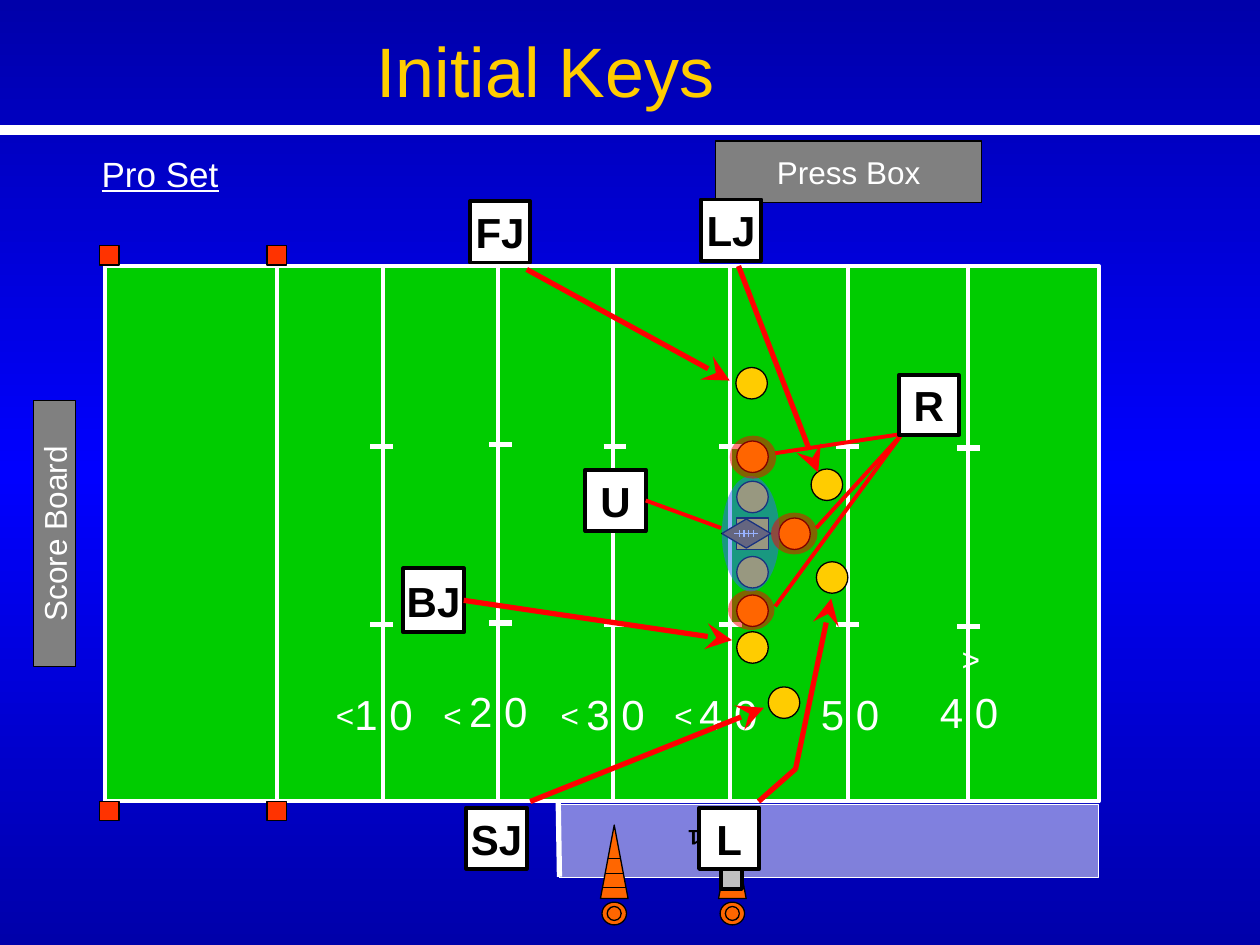
from copy import deepcopy

from lxml import etree
from pptx import Presentation
from pptx.dml.color import RGBColor
from pptx.enum.dml import MSO_LINE
from pptx.enum.shapes import MSO_CONNECTOR, MSO_SHAPE
from pptx.enum.text import MSO_ANCHOR, MSO_AUTO_SIZE, PP_ALIGN
from pptx.oxml.ns import qn
from pptx.util import Pt

RECT, OVAL = MSO_SHAPE.RECTANGLE, MSO_SHAPE.OVAL
TRIANGLE, DIAMOND = MSO_SHAPE.ISOSCELES_TRIANGLE, MSO_SHAPE.FLOWCHART_DECISION
STRAIGHT = MSO_CONNECTOR.STRAIGHT
DOTTED = MSO_LINE.ROUND_DOT
LEFT, CENTER, RIGHT = PP_ALIGN.LEFT, PP_ALIGN.CENTER, PP_ALIGN.RIGHT
MIDDLE = MSO_ANCHOR.MIDDLE
GROW = MSO_AUTO_SIZE.SHAPE_TO_FIT_TEXT
RIGHT_SIDE = 3

WHITE, BLACK, GRAY, SILVER = "FFFFFF", "000000", "808080", "C0C0C0"
GREEN, YELLOW, ORANGE, RED = "00CC00", "FFCC00", "FF6600", "FF0000"
PYLON_RED, BROWN, BLUE = "FF3300", "996600", "3366FF"

FIELD_LEFT, FIELD_TOP, FIELD_WIDTH, FIELD_HEIGHT = 60, 152, 568, 306
FIELD_BOTTOM = FIELD_TOP + FIELD_HEIGHT


def color(hex_text):
    return RGBColor.from_string(hex_text)


class Diagram:
    font = "Arial"

    def __init__(self, page):
        self.page = page
        self.shapes = page.shapes

    def background(self, *stops):
        """Fill the page with an evenly spaced vertical gradient."""
        fill = self.page.background.fill
        fill.gradient()
        fill.gradient_angle = 90
        stop_list = self.page.element.find(".//" + qn("a:gsLst"))
        while len(stop_list) < len(stops):
            stop_list.append(deepcopy(stop_list[-1]))
        for index, (stop, hex_text) in enumerate(zip(fill.gradient_stops, stops)):
            stop.color.rgb = color(hex_text)
            stop.position = index / (len(stops) - 1)

    def shape(self, kind, left, top, width, height, fill=None, line=BLACK,
              weight=0.75, opacity=100):
        shape = self.shapes.add_shape(kind, Pt(left), Pt(top), Pt(width), Pt(height))
        shape.shadow.inherit = False
        if fill:
            shape.fill.solid()
            shape.fill.fore_color.rgb = color(fill)
        else:
            shape.fill.background()
        if opacity < 100:
            tint = shape._element.spPr.find(".//" + qn("a:srgbClr"))
            etree.SubElement(tint, qn("a:alpha"), val=str(opacity * 1000))
        if line:
            shape.line.color.rgb = color(line)
            shape.line.width = Pt(weight)
        else:
            shape.line.fill.background()
        return shape

    def line(self, x1, y1, x2, y2, stroke=WHITE, weight=2.25, arrow=False, start=None):
        """Draw a line; start is a box whose right side it leaves from."""
        line = self.shapes.add_connector(STRAIGHT, Pt(x1), Pt(y1), Pt(x2), Pt(y2))
        line.line.color.rgb = color(stroke)
        line.line.width = Pt(weight)
        if start is not None:
            line.begin_connect(start, RIGHT_SIDE)
        properties = line._element.spPr
        if arrow:
            etree.SubElement(properties.find(qn("a:ln")), qn("a:tailEnd"),
                             type="stealth", w="lg", len="lg")
        etree.SubElement(properties, qn("a:effectLst"))

    def fill_text(self, frame, text, size, ink=WHITE, align=LEFT, bold=False, underline=False):
        frame.text = text
        para = frame.paragraphs[0]
        para.alignment = align
        font = para.runs[0].font
        font.name, font.size = self.font, Pt(size)
        font.bold, font.underline = bold, underline
        font.color.rgb = color(ink)

    def text(self, text, left, top, width, height, size, wrap=False, upside_down=False, **style):
        box = self.shapes.add_textbox(Pt(left), Pt(top), Pt(width), Pt(height))
        frame = box.text_frame
        frame.word_wrap = wrap
        frame.auto_size = GROW
        self.fill_text(frame, text, size, **style)
        if upside_down:
            box.rotation = 180

    def sign(self, text, left, top, width, height, size=18, fill=GRAY, weight=0.75,
             upward=False, **style):
        """Draw a box with centred text, which can read upward."""
        box = self.shape(RECT, left, top, width, height, fill, weight=weight)
        frame = box.text_frame
        frame.word_wrap = False
        frame.vertical_anchor = MIDDLE
        self.fill_text(frame, text, size, align=CENTER, **style)
        if upward:
            box._element.txBody.bodyPr.set("vert", "vert270")
        return box

    def official(self, name, left, top, height=35):
        return self.sign(name, left, top, 34.5, height, 24, WHITE, 2.25, ink=BLACK, bold=True)

    def cone(self, center, bands):
        top, height, half = 471.5, 42, 7.9
        self.shape(TRIANGLE, center - half, top, 2 * half, height, ORANGE)
        self.shape(OVAL, center - 7, 515.5, 14, 13, ORANGE)
        self.shape(OVAL, center - 4, 518, 8, 8)
        for y in bands:
            reach = half * (y - top) / height
            self.line(center - reach, y, center + reach, y, BLACK, 0.75)

    def ball(self, left, top):
        self.shape(DIAMOND, left, top, 28, 16.6, BROWN)
        middle = top + 8.3
        self.line(left + 7.2, middle, left + 20.8, middle, weight=0.75)
        for index in range(4):
            x = left + 10 + 2.7 * index
            self.line(x, middle - 2, x, middle + 2, weight=0.75)

    def highlight(self, left, top, width, height, fill=RED):
        self.shape(OVAL, left, top, width, height, fill, line=None, opacity=50)


def draw_field(diagram):
    diagram.shape(RECT, FIELD_LEFT, FIELD_TOP, FIELD_WIDTH, FIELD_HEIGHT, GREEN, WHITE, 2.25)
    for x in (158.5, 219, 284.5, 350.5, 417, 484.5, 553):
        diagram.line(x, FIELD_TOP, x, FIELD_BOTTOM)
    for x in (57, 152.6):
        for y in (140.5, FIELD_BOTTOM):
            diagram.shape(RECT, x, y, 11, 11, PYLON_RED)
    for label, left, top in (("1 0", 188, 390), ("2 0", 253.5, 388), ("3 0", 320.5, 390),
                             ("4 0", 385, 390), ("5 0", 454.5, 390), ("4 0", 522.5, 389)):
        diagram.text(label, left, top, 55, 36, 24, wrap=True, align=RIGHT)
    diagram.line(319, FIELD_BOTTOM, 319.7, 501, weight=3)
    strip = diagram.shape(RECT, 319.7, 459.4, 308, 41.8, WHITE, WHITE, 0.25, opacity=50)
    strip.line.dash_style = DOTTED
    for center, y in ((218, 255), (286, 254), (351.5, 255),
                      (417.5, 255), (484.5, 255), (553.5, 256)):
        for hash_y in (y, y + 102):
            diagram.line(center - 6.5, hash_y, center + 6.5, hash_y, weight=3)
    for left in (184.5, 246, 313, 378):
        diagram.text("<", left, 394, 25, 29, 18, align=RIGHT)
    diagram.text("<", 542.5, 364, 25, 29, 18, upside_down=True, align=RIGHT)


def draw_sideline(diagram):
    diagram.cone(418.5, (499, 507))
    diagram.shape(RECT, 412, 493, 12, 15, SILVER, weight=2.25)
    diagram.text("1", 386, 468.5, 21, 21.6, 12, upside_down=True, ink=BLACK, bold=True)
    diagram.cone(351, (490.5, 499, 507))


def draw_players(diagram):
    diagram.shape(RECT, 421, 296, 18, 18, YELLOW)
    for left, top in ((421, 275), (421, 252), (421, 318), (421, 340), (445, 296), (439, 392.5),
                      (421, 361), (420.5, 210), (463.5, 268), (466.5, 321)):
        diagram.shape(OVAL, left, top, 18, 18, YELLOW)
    diagram.ball(412.5, 296.6)


def draw_keys(diagram, umpire, back_judge):
    for ends in ((303, 458, 436.5, 404.5), (301, 154, 417, 217.5),
                 (454.5, 440, 475, 342), (422, 152, 467.5, 270)):
        diagram.line(*ends, RED, 3, arrow=True)
    diagram.line(265, 343, 418.3, 365.8, RED, 3, arrow=True, start=back_judge)
    diagram.line(433.5, 458, 454.5, 439.5, RED, 3)
    diagram.highlight(416, 337, 26.6, 23)
    diagram.highlight(412.5, 272, 33, 66, BLUE)
    diagram.line(369, 286, 412, 301.7, RED, start=umpire)
    diagram.highlight(417, 249, 26.6, 24.5)
    diagram.highlight(440.6, 293, 26.6, 23.8)
    for x, y in ((443, 346.5), (466.5, 301.7), (443, 259)):
        diagram.line(x, y, 515.5, 248, RED)


def main():
    deck = Presentation()
    deck.slide_width, deck.slide_height = Pt(720), Pt(540)
    diagram = Diagram(deck.slides.add_slide(deck.slide_layouts[6]))
    diagram.background("0000AA", "0000FF", "0000AA")
    diagram.sign("Press Box", 409, 80.6, 152, 35)
    diagram.line(0, 74.2, 720, 74.2, weight=6)
    diagram.text("Pro Set", 51, 83.5, 81, 30, 20, underline=True)
    draw_field(diagram)
    draw_sideline(diagram)
    diagram.sign("Score Board", 19, 229, 24, 152, upward=True)
    diagram.text("Initial Keys", 208, 12, 443, 55, 40, wrap=True, ink=YELLOW)
    diagram.official("FJ", 268.5, 115)
    umpire = diagram.official("U", 334.5, 268.5)
    diagram.official("SJ", 266.5, 461.5)
    diagram.official("L", 399.5, 461.5)
    diagram.official("LJ", 400.5, 114)
    back_judge = diagram.official("BJ", 230.5, 324.7, 36.7)
    draw_players(diagram)
    draw_keys(diagram, umpire, back_judge)
    diagram.official("R", 513.5, 214.5, 34)
    deck.save("out.pptx")


if __name__ == "__main__":
    main()
